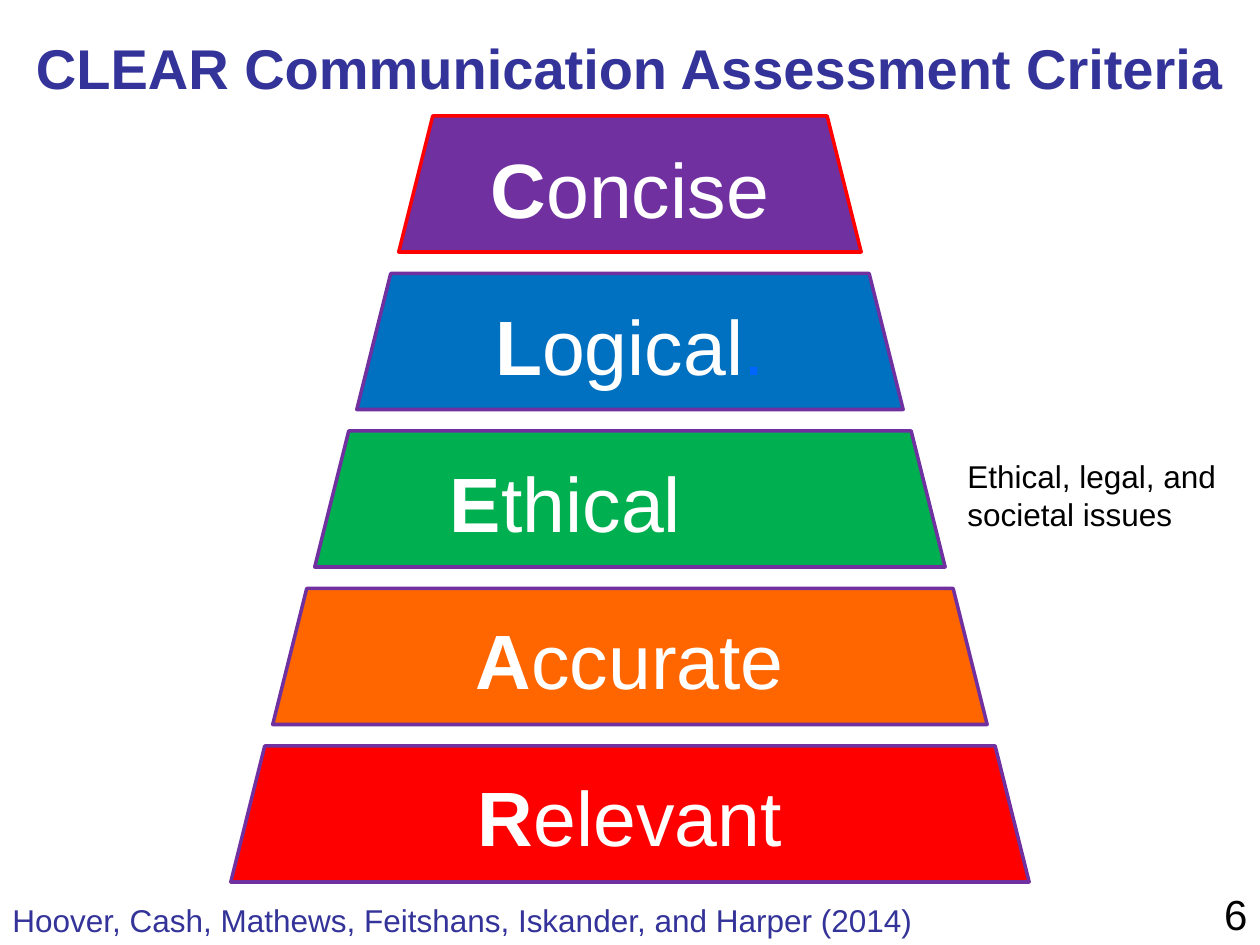
import pptx
import pptx.util
import pptx.dml.color
import pptx.enum.shapes
import pptx.enum.text

Inches, Pt = pptx.util.Inches, pptx.util.Pt
RGBColor = pptx.dml.color.RGBColor
ALIGN = pptx.enum.text.PP_ALIGN
ANCHOR = pptx.enum.text.MSO_ANCHOR
AUTO_SIZE = pptx.enum.text.MSO_AUTO_SIZE

INDIGO = RGBColor(0x33, 0x33, 0x99)
PURPLE = RGBColor(0x70, 0x30, 0xA0)
BLUE = RGBColor(0x00, 0x70, 0xC0)
BRIGHT_BLUE = RGBColor(0x00, 0x66, 0xFF)
GREEN = RGBColor(0x00, 0xB0, 0x50)
ORANGE = RGBColor(0xFF, 0x66, 0x00)
RED = RGBColor(0xFF, 0x00, 0x00)
WHITE = RGBColor(0xFF, 0xFF, 0xFF)
BLACK = RGBColor(0x00, 0x00, 0x00)

TITLE = "CLEAR Communication Assessment Criteria"
# initial, rest of the word, closing mark, fill, outline, right text inset
CRITERIA = [
    ("C", "oncise", "", PURPLE, RED, 0.1),
    ("L", "ogical", ".", BLUE, PURPLE, 0.1),
    ("E", "thical", "", GREEN, PURPLE, 1.12),
    ("A", "ccurate", "", ORANGE, PURPLE, 0.1),
    ("R", "elevant", "", RED, PURPLE, 0.1),
]
# text, (left, top, width, height), size, colour, alignment, wraps
LABELS = [
    ("6", (7.67, 7, 2.33, 0.5), 24, BLACK, ALIGN.RIGHT, True),
    ("Ethical, legal, and\vsocietal issues", (7.58, 3.58, 2.19, 0.71),
     18, BLACK, ALIGN.LEFT, False),
    ("Hoover, Cash, Mathews, Feitshans, Iskander, and Harper (2014)",
     (0, 7.1, 7.68, 0.4), 18, INDIGO, ALIGN.LEFT, False),
]

SLIDE_WIDTH, SLIDE_HEIGHT = 10, 7.5
TIER_TOP, TIER_HEIGHT, TIER_STEP = 0.92, 1.08, 1.25
TOP_TIER_WIDTH, TIER_WIDENING = 3.67, 2 / 3


def set_values(target, values):
    for name, value in values.items():
        setattr(target, name, value)


def style_font(font, size, colour, bold=False):
    set_values(font, {"name": "Arial", "size": Pt(size), "bold": bold})
    font.color.rgb = colour


def add_title(slide):
    title = slide.shapes.title
    set_values(title, {"left": Inches(0), "top": Inches(0.25),
                       "width": Inches(SLIDE_WIDTH), "height": Inches(0.67)})
    set_values(title.text_frame, {"text": TITLE, "word_wrap": True,
                                  "auto_size": AUTO_SIZE.NONE,
                                  "vertical_anchor": ANCHOR.MIDDLE})
    heading = title.text_frame.paragraphs[0]
    set_values(heading, {"alignment": ALIGN.CENTER, "line_spacing": 0.8})
    style_font(heading.runs[0].font, 32, INDIGO, True)


def add_tier(slide, level, criterion):
    initial, rest, mark, fill, outline, right_inset = criterion
    width = TOP_TIER_WIDTH + level * TIER_WIDENING
    tier = slide.shapes.add_shape(
        pptx.enum.shapes.MSO_SHAPE.TRAPEZOID,
        Inches((SLIDE_WIDTH - width) / 2), Inches(TIER_TOP + level * TIER_STEP),
        Inches(width), Inches(TIER_HEIGHT))
    tier.shadow.inherit = False
    tier.fill.solid()
    tier.fill.fore_color.rgb = fill
    tier.line.color.rgb = outline
    tier.line.width = Pt(2)
    set_values(tier.text_frame, {"word_wrap": True,
                                 "vertical_anchor": ANCHOR.MIDDLE,
                                 "margin_right": Inches(right_inset)})
    word = tier.text_frame.paragraphs[0]
    word.alignment = ALIGN.CENTER
    for text, colour, bold in ((initial, WHITE, True), (rest, WHITE, False),
                               (mark, BRIGHT_BLUE, False)):
        if text:
            run = word.add_run()
            run.text = text
            style_font(run.font, 44, colour, bold)


def add_label(slide, text, box, size, colour, alignment, wraps):
    label = slide.shapes.add_textbox(*map(Inches, box))
    set_values(label.text_frame, {"text": text, "word_wrap": wraps})
    paragraph = label.text_frame.paragraphs[0]
    paragraph.alignment = alignment
    for run in paragraph.runs:
        style_font(run.font, size, colour)


def main():
    deck = pptx.Presentation()
    set_values(deck, {"slide_width": Inches(SLIDE_WIDTH),
                      "slide_height": Inches(SLIDE_HEIGHT)})
    slide = deck.slides.add_slide(deck.slide_layouts[5])
    add_title(slide)
    for level, criterion in enumerate(CRITERIA):
        add_tier(slide, level, criterion)
    for label in LABELS:
        add_label(slide, *label)
    deck.save("out.pptx")


if __name__ == "__main__":
    main()
